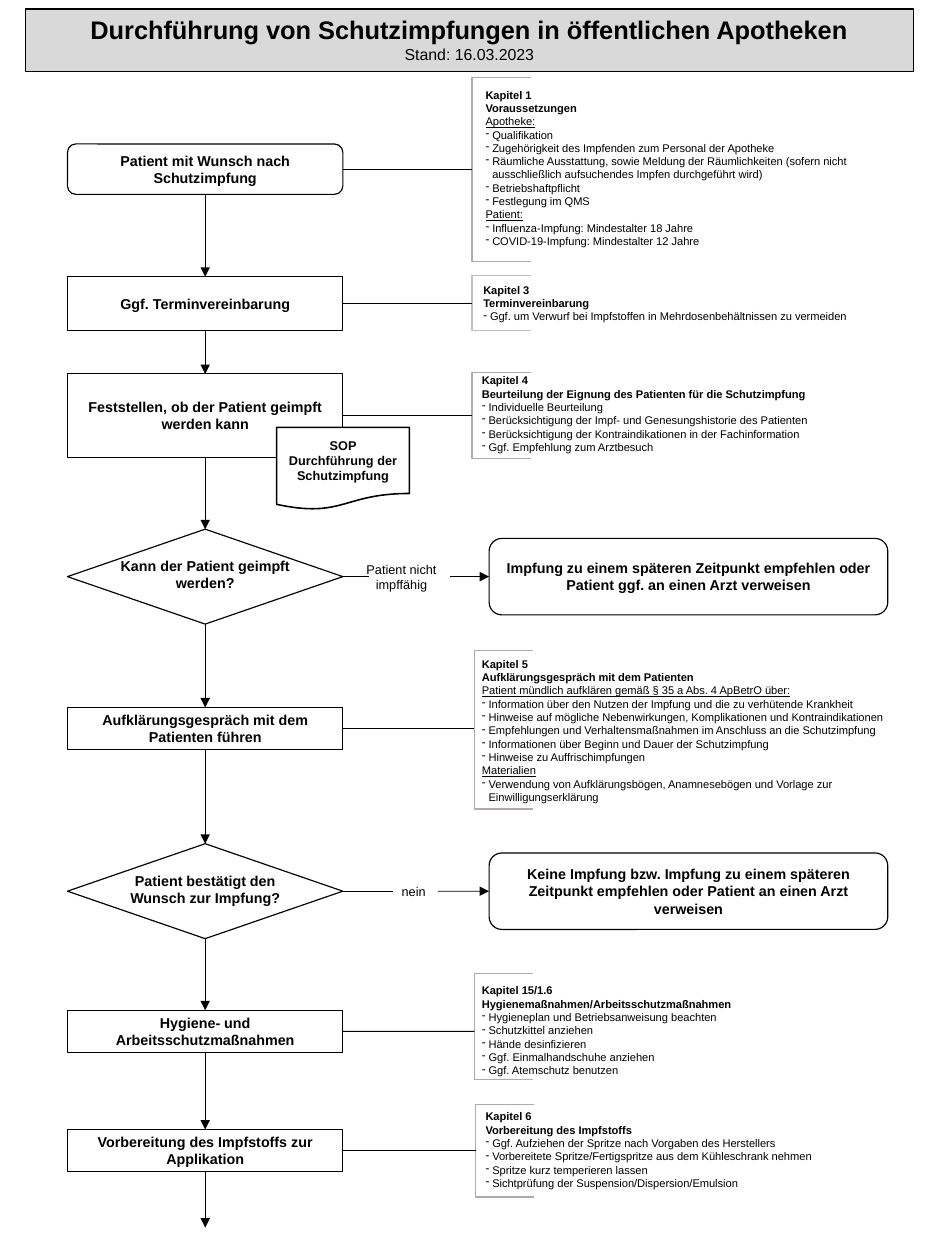
from typing import NamedTuple, Optional

from lxml import etree
from pptx import Presentation
from pptx.dml.color import RGBColor
from pptx.enum.shapes import MSO_CONNECTOR, MSO_SHAPE
from pptx.enum.text import MSO_ANCHOR, PP_ALIGN
from pptx.oxml.ns import qn
from pptx.util import Cm, Pt

RECT = MSO_SHAPE.RECTANGLE
PROCESS = MSO_SHAPE.FLOWCHART_PROCESS
ROUNDED = MSO_SHAPE.FLOWCHART_ALTERNATE_PROCESS
DIAMOND = MSO_SHAPE.DIAMOND
DOCUMENT = MSO_SHAPE.FLOWCHART_DOCUMENT
STRAIGHT = MSO_CONNECTOR.STRAIGHT
TOP, MIDDLE = MSO_ANCHOR.TOP, MSO_ANCHOR.MIDDLE
CENTER, LEFT = PP_ALIGN.CENTER, PP_ALIGN.LEFT
SITE_TOP, SITE_LEFT, SITE_BOTTOM, SITE_RIGHT = range(4)

FONT = "Arial"
BLACK, WHITE, GREY = "000000", "FFFFFF", "AFABAB"
STEP_X, STEP_W = 1.5, 6.12
STEP_MID = STEP_X + STEP_W / 2
BRACKET_W, NOTE_W = 1.3, 9.93
RESULT_X, RESULT_W, RESULT_H = 10.87, 8.86, 1.7
FLOW_END = 27.28
BULLET_INDENT = Cm(0.15)


class Note(NamedTuple):
    x: float
    y: float
    h: float
    text_x: float
    text_y: float
    lines: list[str]
    color: str = GREY


class Exit(NamedTuple):
    """Side branch of a decision: label box, gap in the line, result text."""
    label: str
    label_x: float
    label_w: float
    label_h: float
    gap: tuple[float, float]
    result: str


class Step(NamedTuple):
    kind: MSO_SHAPE
    y: float
    h: float
    text: str
    note: Optional[Note] = None
    exit: Optional[Exit] = None


STEPS = [
    Step(ROUNDED, 3.2, 1.12, "Patient mit Wunsch nach\nSchutzimpfung", Note(
        10.49, 1.73, 4.09, 10.54, 1.83, [
            "Kapitel 1", "Voraussetzungen", "Apotheke:",
            "- Qualifikation",
            "- Zugehörigkeit des Impfenden zum Personal der Apotheke",
            "- Räumliche Ausstattung, sowie Meldung der Räumlichkeiten (sofern nicht"
            "\vausschließlich aufsuchendes Impfen durchgeführt wird)",
            "- Betriebshaftpflicht", "- Festlegung im QMS", "Patient:",
            "- Influenza-Impfung: Mindestalter 18 Jahre",
            "- COVID-19-Impfung: Mindestalter 12 Jahre"])),
    Step(PROCESS, 6.15, 1.2, "Ggf. Terminvereinbarung", Note(
        10.49, 6.12, 1.22, 10.49, 6.17, [
            "Kapitel 3", "Terminvereinbarung",
            "- Ggf. um Verwurf bei Impfstoffen in Mehrdosenbehältnissen zu vermeiden"],
        "BFBFBF")),
    Step(PROCESS, 8.31, 1.85, "Feststellen, ob der Patient geimpft werden kann", Note(
        10.49, 8.28, 1.91, 10.46, 8.18, [
            "Kapitel 4", "Beurteilung der Eignung des Patienten für die Schutzimpfung",
            "- Individuelle Beurteilung",
            "- Berücksichtigung der Impf- und Genesungshistorie des Patienten",
            "- Berücksichtigung der Kontraindikationen in der Fachinformation",
            "- Ggf. Empfehlung zum Arztbesuch"])),
    Step(DIAMOND, 11.76, 2.11, "Kann der Patient geimpft werden?", exit=Exit(
        "Patient nicht\vimpffähig", 7.72, 2.41, 0.94, (8.2, 10.01),
        "Impfung zu einem späteren Zeitpunkt empfehlen oder\n"
        "Patient ggf. an einen Arzt verweisen")),
    Step(PROCESS, 15.72, 0.94, "Aufklärungsgespräch mit dem Patienten führen", Note(
        10.54, 14.45, 3.53, 10.46, 14.48, [
            "Kapitel 5", "Aufklärungsgespräch mit dem Patienten",
            "Patient mündlich aufklären gemäß § 35 a Abs. 4 ApBetrO über:",
            "- Information über den Nutzen der Impfung und die zu verhütende Krankheit",
            "- Hinweise auf mögliche Nebenwirkungen, Komplikationen und Kontraindikationen",
            "- Empfehlungen und Verhaltensmaßnahmen im Anschluss an die Schutzimpfung",
            "- Informationen über Beginn und Dauer der Schutzimpfung",
            "- Hinweise zu Auffrischimpfungen", "Materialien",
            "- Verwendung von Aufklärungsbögen, Anamnesebögen und Vorlage zur"
            "\vEinwilligungserklärung"])),
    Step(DIAMOND, 18.75, 2.11, "Patient bestätigt den Wunsch zur Impfung?", exit=Exit(
        "nein", 8.61, 1.17, 0.61, (8.74, 9.73),
        "Keine Impfung bzw. Impfung zu einem späteren Zeitpunkt empfehlen "
        "oder Patient an einen Arzt verweisen")),
    Step(PROCESS, 22.45, 0.94, "Hygiene- und Arbeitsschutzmaßnahmen", Note(
        10.54, 21.64, 2.35, 10.46, 21.74, [
            "Kapitel 15/1.6", "Hygienemaßnahmen/Arbeitsschutzmaßnahmen",
            "- Hygieneplan und Betriebsanweisung beachten", "- Schutzkittel anziehen",
            "- Hände desinfizieren", "- Ggf. Einmalhandschuhe anziehen",
            "- Ggf. Atemschutz benutzen"])),
    Step(PROCESS, 25.1, 0.94, "Vorbereitung des Impfstoffs zur Applikation", Note(
        10.57, 24.54, 2.06, 10.54, 24.54, [
            "Kapitel 6", "Vorbereitung des Impfstoffs",
            "- Ggf. Aufziehen der Spritze nach Vorgaben des Herstellers",
            "- Vorbereitete Spritze/Fertigspritze aus dem Kühleschrank nehmen",
            "- Spritze kurz temperieren lassen",
            "- Sichtprüfung der Suspension/Dispersion/Emulsion"])),
]


def rgb(color: str) -> RGBColor:
    return RGBColor.from_string(color)


def write(sp, text: str, size: float, bold=False, anchor=MIDDLE, align=CENTER):
    tf = sp.text_frame
    tf.text = text
    tf.word_wrap = True
    tf.vertical_anchor = anchor
    for p in tf.paragraphs:
        p.alignment = align
        for r in p.runs:
            r.font.name, r.font.size, r.font.bold = FONT, Pt(size), bold
            r.font.color.rgb = rgb(BLACK)
    return tf


def add_box(s, kind, x, y, w, h, fill: Optional[str] = WHITE, line=0.75):
    sp = s.shapes.add_shape(kind, Cm(x), Cm(y), Cm(w), Cm(h))
    sp.shadow.inherit = False
    if fill:
        sp.fill.solid()
        sp.fill.fore_color.rgb = rgb(fill)
    else:
        sp.fill.background()
    sp.line.color.rgb = rgb(BLACK)
    sp.line.width = Pt(line)
    return sp


def add_text(s, x, y, w, h):
    return s.shapes.add_textbox(Cm(x), Cm(y), Cm(w), Cm(h))


def add_line(s, x1, y1, x2, y2, arrow=False, start=None, end=None):
    """Draw a line; start and end are optional (shape, site) pairs to join."""
    cx = s.shapes.add_connector(STRAIGHT, Cm(x1), Cm(y1), Cm(x2), Cm(y2))
    if start:
        cx.begin_connect(*start)
    if end:
        cx.end_connect(*end)
    cx.line.color.rgb = rgb(BLACK)
    cx.line.width = Pt(0.5)
    if arrow:
        etree.SubElement(cx.line._get_or_add_ln(), qn("a:tailEnd"), type="triangle")
    etree.SubElement(cx._element.spPr, qn("a:effectLst"))


def add_note(s, note: Note) -> None:
    left, right = Cm(note.x), Cm(note.x + BRACKET_W)
    top, bottom = Cm(note.y), Cm(note.y + note.h)
    fb = s.shapes.build_freeform(right, top)
    fb.add_line_segments([(left, top), (left, bottom), (right, bottom)], close=False)
    sp = fb.convert_to_shape()
    sp.shadow.inherit = False
    sp.fill.background()
    sp.line.color.rgb = rgb(note.color)
    sp.line.width = Pt(0.75)

    text = "\n".join(line.removeprefix("- ") for line in note.lines)
    tf = write(add_text(s, note.text_x, note.text_y, NOTE_W, note.h),
               text, 7, anchor=TOP, align=LEFT)
    for i, (p, line) in enumerate(zip(tf.paragraphs, note.lines)):
        if line.startswith("- "):
            pPr = p._p.get_or_add_pPr()
            pPr.set("marL", str(BULLET_INDENT))
            pPr.set("indent", str(-BULLET_INDENT))
            etree.SubElement(pPr, qn("a:buChar"), char="-")
            continue
        for r in p.runs:
            r.font.bold, r.font.underline = i < 2, i >= 2


def add_exit(s, decision, ex: Exit, mid: float) -> None:
    result = add_box(s, ROUNDED, RESULT_X, mid - RESULT_H / 2, RESULT_W, RESULT_H)
    write(result, ex.result, 9, bold=True)
    write(add_text(s, ex.label_x, mid - ex.label_h / 2, ex.label_w, ex.label_h),
          ex.label, 8)
    gap_start, gap_end = ex.gap
    add_line(s, STEP_X + STEP_W, mid, gap_start, mid, start=(decision, SITE_RIGHT))
    add_line(s, gap_end, mid, RESULT_X, mid, arrow=True, end=(result, SITE_LEFT))


def add_step(s, step: Step):
    sp = add_box(s, step.kind, STEP_X, step.y, STEP_W, step.h,
                 None if step.kind == DIAMOND else WHITE)
    label = add_text(s, 2.3, step.y + 0.5, 4.52, 1.02) if step.kind == DIAMOND else sp
    write(label, step.text, 9, bold=True)
    mid = step.y + step.h / 2
    if step.note:
        add_note(s, step.note)
        add_line(s, STEP_X + STEP_W, mid, step.note.x, mid, start=(sp, SITE_RIGHT))
    if step.exit:
        add_exit(s, sp, step.exit, mid)
    return sp


def main() -> None:
    prs = Presentation()
    prs.slide_width, prs.slide_height = Cm(21), Cm(28)
    s = prs.slides.add_slide(prs.slide_layouts[6])

    title = add_box(s, RECT, 0.56, 0.2, 19.74, 1.4, "D9D9D9")
    tf = write(title, "Durchführung von Schutzimpfungen in öffentlichen Apotheken\n"
               "Stand: 16.03.2023", 10, anchor=TOP)
    heading = tf.paragraphs[0].runs[0]
    heading.font.size, heading.font.bold = Pt(16), True

    boxes = [add_step(s, step) for step in STEPS]
    for step, upper, lower in zip(STEPS, boxes, boxes[1:]):
        y = step.y + step.h
        add_line(s, STEP_MID, y, STEP_MID, y, True, (upper, SITE_BOTTOM), (lower, SITE_TOP))
    add_line(s, STEP_MID, STEPS[-1].y + STEPS[-1].h, STEP_MID, FLOW_END, True,
             (boxes[-1], SITE_BOTTOM))

    sop = add_box(s, DOCUMENT, 6.15, 9.5, 2.95, 1.83, line=1)
    write(sop, "SOP\nDurchführung der Schutzimpfung", 8, bold=True)
    prs.save("out.pptx")


if __name__ == "__main__":
    main()
